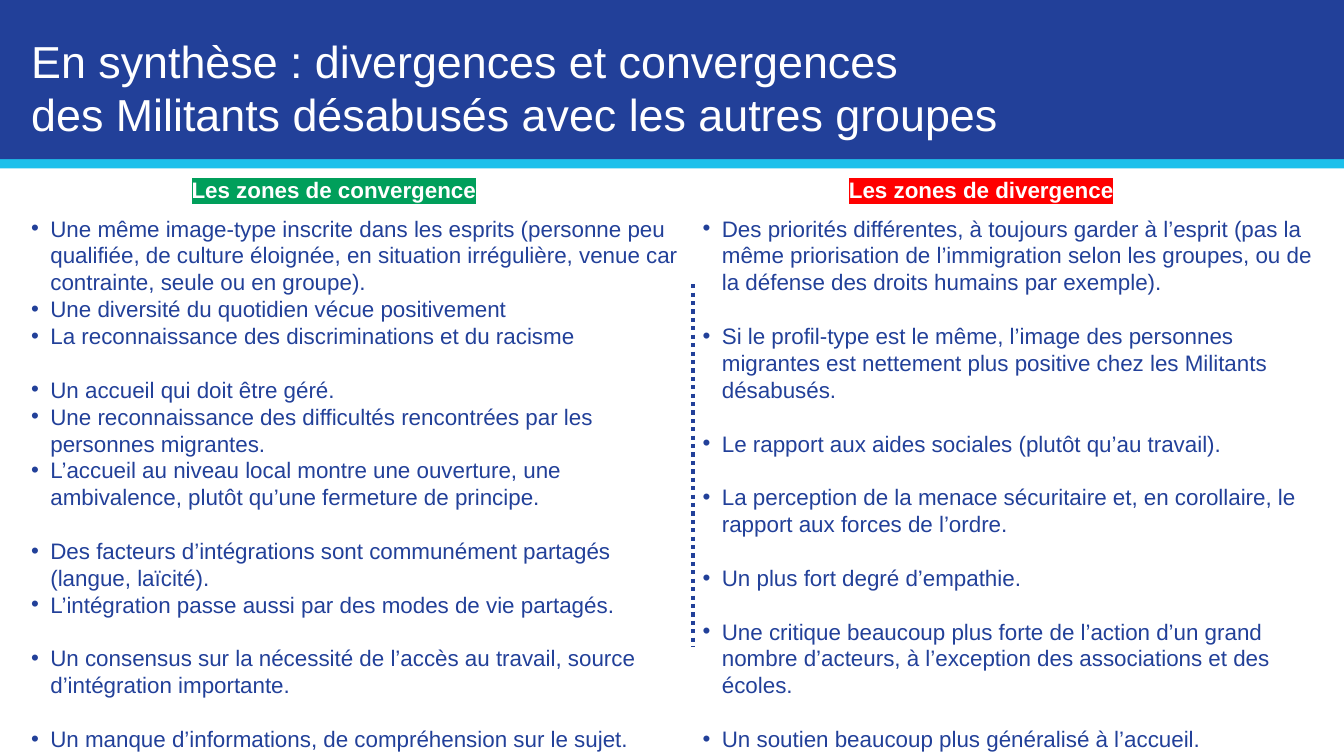
from lxml import etree
from pptx import Presentation, util as u
from pptx.dml.color import RGBColor
from pptx.enum import dml, shapes
from pptx.oxml import ns

WHITE = RGBColor(0xFF, 0xFF, 0xFF)
NAVY = RGBColor(0x22, 0x40, 0x99)
CYAN = RGBColor(0x1E, 0xC0, 0xEB)
GREEN = RGBColor(0x00, 0x9F, 0x5B)
RED = RGBColor(0xFF, 0x00, 0x00)

# Each column is a list of groups, set one blank line apart.
SHARED = [
    ["Une même image-type inscrite dans les esprits (personne peu qualifiée, de culture éloignée, "
     "en situation irrégulière, venue car contrainte, seule ou en groupe).",
     "Une diversité du quotidien vécue positivement",
     "La reconnaissance des discriminations et du racisme"],
    ["Un accueil qui doit être géré.",
     "Une reconnaissance des difficultés rencontrées par les personnes migrantes.",
     "L’accueil au niveau local montre une ouverture, une ambivalence, "
     "plutôt qu’une fermeture de principe."],
    ["Des facteurs d’intégrations sont communément partagés (langue, laïcité).",
     "L’intégration passe aussi par des modes de vie partagés."],
    ["Un consensus sur la nécessité de l’accès au travail, source d’intégration importante."],
    ["Un manque d’informations, de compréhension sur le sujet."],
]
SPLIT = [
    ["Des priorités différentes, à toujours garder à l’esprit (pas la même priorisation de "
     "l’immigration selon les groupes, ou de la défense des droits humains par exemple)."],
    ["Si le profil-type est le même, l’image des personnes migrantes est nettement plus positive "
     "chez les Militants désabusés."],
    ["Le rapport aux aides sociales (plutôt qu’au travail)."],
    ["La perception de la menace sécuritaire et, en corollaire, le rapport aux forces de l’ordre."],
    ["Un plus fort degré d’empathie."],
    ["Une critique beaucoup plus forte de l’action d’un grand nombre d’acteurs, "
     "à l’exception des associations et des écoles."],
    ["Un soutien beaucoup plus généralisé à l’accueil."],
]


class Deck:
    face = "Arial"
    size = 16
    lead = 1.2

    def __init__(self, slide):
        self.slide = slide

    def band(self, top, height, color):
        bar = self.slide.shapes.add_shape(
            shapes.MSO_SHAPE.RECTANGLE, 0, u.Inches(top), u.Inches(13.33), u.Inches(height))
        bar.shadow.inherit = False
        bar.fill.solid()
        bar.fill.fore_color.rgb = color
        bar.line.fill.background()

    def frame(self, left, top, width, height):
        box = self.slide.shapes.add_textbox(*map(u.Inches, (left, top, width, height)))
        frame = box.text_frame
        frame.word_wrap = True
        frame.margin_left = frame.margin_right = frame.margin_top = frame.margin_bottom = 0
        return frame

    def style(self, para, color, size=size, bold=False):
        para.line_spacing = u.Pt(size * self.lead)
        font = para.font
        font.name, font.size, font.bold = self.face, u.Pt(size), bold
        font.color.rgb = color

    def title(self, words, *place):
        para = self.frame(*place).paragraphs[0]
        para.text = words
        self.style(para, WHITE, 32)

    def label(self, words, color, *place):
        """Add a bold heading on a highlight of the given colour."""
        para = self.frame(*place).paragraphs[0]
        run = para.add_run()
        run.text = words
        mark = etree.SubElement(run.font._element, ns.qn("a:highlight"))
        etree.SubElement(mark, ns.qn("a:srgbClr"), val=str(color))
        self.style(para, WHITE, bold=True)

    def bullets(self, groups, *place):
        frame = self.frame(*place)
        para = None
        for group in groups:
            for rank, words in enumerate(group):
                first = para is None
                para = frame.paragraphs[0] if first else frame.add_paragraph()
                para.text = words
                props = para._p.get_or_add_pPr()
                indent = u.Inches(0.19)
                props.set("marL", str(indent))
                props.set("indent", str(-indent))
                etree.SubElement(props, ns.qn("a:buFont"), typeface=self.face)
                etree.SubElement(props, ns.qn("a:buChar"), char="•")
                if rank == 0 and not first:
                    para.space_before = u.Pt(self.size * self.lead)
                self.style(para, NAVY)

    def divide(self, left, top, end):
        """Add a dotted vertical line."""
        rule = self.slide.shapes.add_connector(
            shapes.MSO_CONNECTOR.STRAIGHT, *map(u.Inches, (left, top, left, end)))
        rule.line.color.rgb = NAVY
        rule.line.width = u.Pt(3)
        rule.line.dash_style = dml.MSO_LINE.ROUND_DOT
        etree.SubElement(rule._element.spPr, ns.qn("a:effectLst"))


def main():
    show = Presentation()
    show.slide_width, show.slide_height = u.Inches(13.33), u.Inches(7.5)
    deck = Deck(show.slides.add_slide(show.slide_layouts[6]))
    deck.band(1.57, 0.1, CYAN)
    deck.band(0, 1.58, NAVY)
    deck.title("En synthèse : divergences et convergences\v"
               "des Militants désabusés avec les autres groupes", 0.31, 0.33, 12.36, 0.64)
    deck.label("Les zones de divergence", RED, 8.42, 1.75, 2.7, 0.27)
    deck.label("Les zones de convergence", GREEN, 1.9, 1.75, 3.01, 0.27)
    deck.divide(6.87, 2.82, 6.41)
    deck.bullets(SHARED, 0.31, 2.13, 6.56, 5.39)
    deck.bullets(SPLIT, 6.97, 2.13, 6.26, 5.39)
    show.save("out.pptx")


if __name__ == "__main__":
    main()
